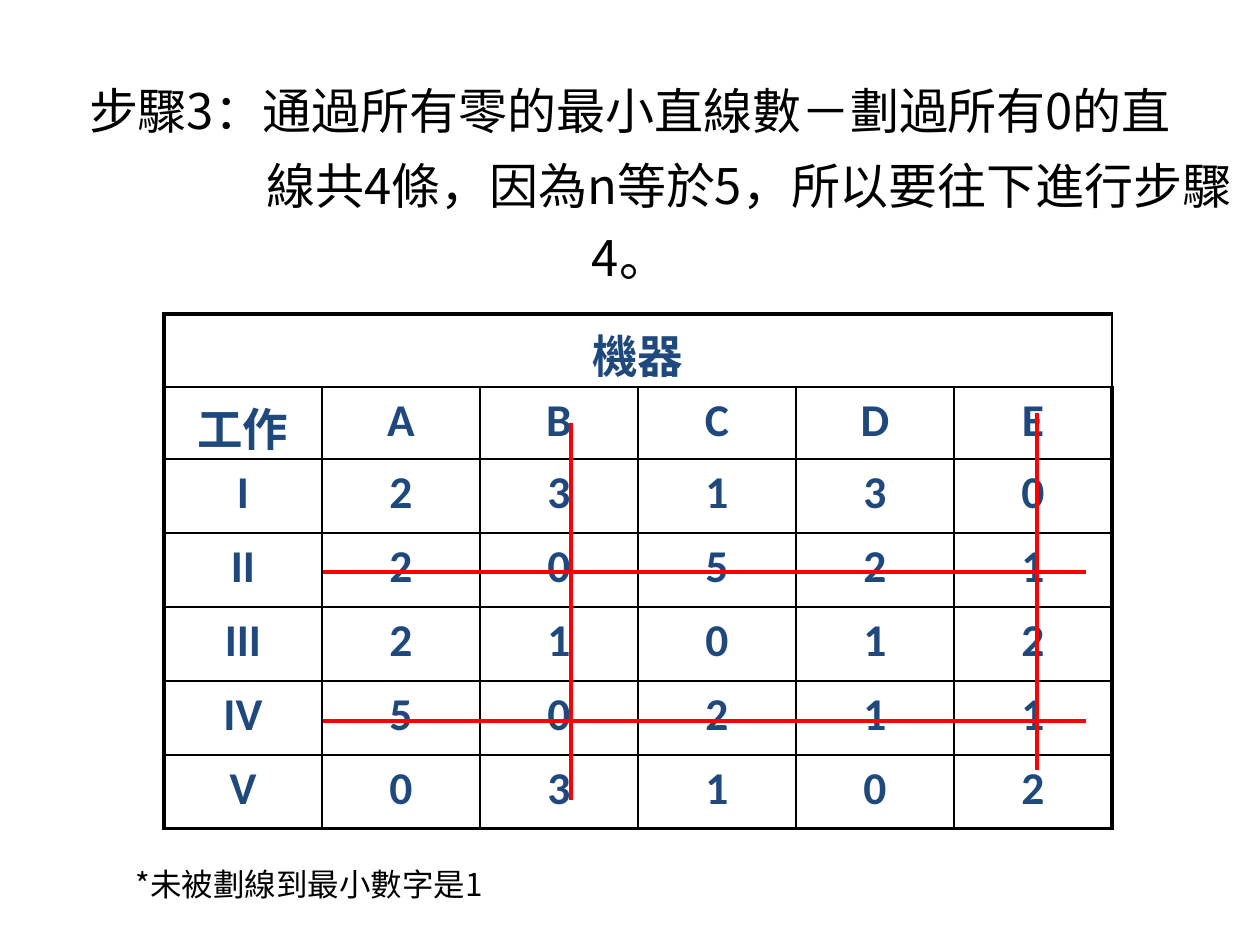
from lxml.etree import SubElement
from pptx import Presentation
from pptx.dml.color import RGBColor
from pptx.enum.shapes import MSO_CONNECTOR as Connector
from pptx.enum.text import MSO_ANCHOR as Anchor, PP_ALIGN as Align
from pptx.oxml.ns import qn
from pptx.util import Emu, Pt

PX_PER_INCH = 126
CJK_FONT = "Noto Sans CJK SC"
BLACK, NAVY, RED = "000000", "1F497D", "FF0000"
THIN, THICK = 1, 2.25

TITLE = [
    ("步驟3：通過所有零的最小直線數－劃過所有0的直", 0),
    ("線共4條，因為n等於5，所以要往下進行步驟4。", 238),
]
ROWS = [
    ["機器", "", "", "", "", ""],
    ["工作", "A", "B", "C", "D", "E"],
    ["I", "2", "3", "1", "3", "0"],
    ["II", "2", "0", "5", "2", "1"],
    ["III", "2", "1", "0", "1", "2"],
    ["IV", "5", "0", "2", "1", "1"],
    ["V", "0", "3", "1", "0", "2"],
]
ROW_HEIGHTS = [73, 72] + [74] * 5
COLUMN_WIDTH = 158
# Ends of the covering lines, relative to the table corner
COVER_LINES = [
    (407, 109, 407, 486),
    (873, 99, 873, 456),
    (159, 258, 922, 258),
    (159, 407, 922, 407),
]


def px(length):
    return Emu(round(length * 914400 / PX_PER_INCH))


def color(hex_value):
    return RGBColor.from_string(hex_value)


def add_run(paragraph, text, size, font_name, hex_value, bold=False):
    run = paragraph.add_run()
    run.text = text
    run.font.size = Pt(size)
    run.font.name = font_name
    run.font.bold = bold
    run.font.color.rgb = color(hex_value)
    east_asian = SubElement(run.font._element, qn("a:ea"))
    east_asian.set("typeface", CJK_FONT)


def add_text_frame(slide, left, top, width, height):
    shape = slide.shapes.add_textbox(px(left), px(top), px(width), px(height))
    shape.text_frame.word_wrap = True
    return shape.text_frame


def add_title(slide, left, top, width, height):
    frame = add_text_frame(slide, left, top, width, height)
    frame.vertical_anchor = Anchor.MIDDLE
    frame.margin_left = frame.margin_right = px(6)
    for index, (text, indent) in enumerate(TITLE):
        paragraph = frame.add_paragraph() if index else frame.paragraphs[0]
        paragraph.alignment = Align.CENTER
        paragraph.line_spacing = Pt(41)
        paragraph.space_before = Pt(2)
        # First-line indent pushes the continued sentence to the right
        paragraph._p.get_or_add_pPr().set("indent", str(px(indent)))
        add_run(paragraph, text, 28, CJK_FONT, BLACK)


def set_borders(cell, widths):
    properties = cell._tc.get_or_add_tcPr()
    for side, width in zip("LRTB", widths):
        line = SubElement(properties, qn(f"a:ln{side}"), w=str(Pt(width)))
        fill = SubElement(line, qn("a:solidFill"))
        SubElement(fill, qn("a:srgbClr"), val=BLACK)


def add_cost_table(slide, left, top):
    row_count, column_count = len(ROWS), len(ROWS[0])
    table = slide.shapes.add_table(
        row_count, column_count, px(left), px(top),
        px(COLUMN_WIDTH * column_count), px(sum(ROW_HEIGHTS))).table
    table.first_row = table.horz_banding = False
    for column in table.columns:
        column.width = px(COLUMN_WIDTH)
    for row, height in zip(table.rows, ROW_HEIGHTS):
        row.height = px(height)
    table.cell(0, 0).merge(table.cell(0, column_count - 1))

    for r, values in enumerate(ROWS):
        for c, text in enumerate(values):
            cell = table.cell(r, c)
            cell.margin_bottom = 0
            # Thick frame outside, thin rules inside
            outer = (c == 0, c == column_count - 1, r == 0, r == row_count - 1)
            set_borders(cell, [THICK if edge else THIN for edge in outer])
            cell.fill.background()
            if text:
                paragraph = cell.text_frame.paragraphs[0]
                paragraph.alignment = Align.CENTER
                add_run(paragraph, text, 26, "Calibri", NAVY, bold=True)


def add_cover_lines(slide, left, top):
    for x1, y1, x2, y2 in COVER_LINES:
        line = slide.shapes.add_connector(
            Connector.STRAIGHT, px(left + x1), px(top + y1),
            px(left + x2), px(top + y2))
        line.line.color.rgb = color(RED)
        line.line.width = Pt(THICK)
        SubElement(line._element.spPr, qn("a:effectLst"))


def add_footnote(slide, left, top, width, height):
    frame = add_text_frame(slide, left, top, width, height)
    add_run(frame.paragraphs[0], "*未被劃線到最小數字是1", 18, CJK_FONT, BLACK)


def main():
    presentation = Presentation()
    presentation.slide_width, presentation.slide_height = px(1260), px(945)
    slide = presentation.slides.add_slide(presentation.slide_layouts[6])
    add_title(slide, 0, 106, 1260, 142)
    add_cost_table(slide, 164, 314)
    add_cover_lines(slide, 164, 314)
    add_footnote(slide, 123, 859, 397, 50)
    presentation.save("out.pptx")


if __name__ == "__main__":
    main()
